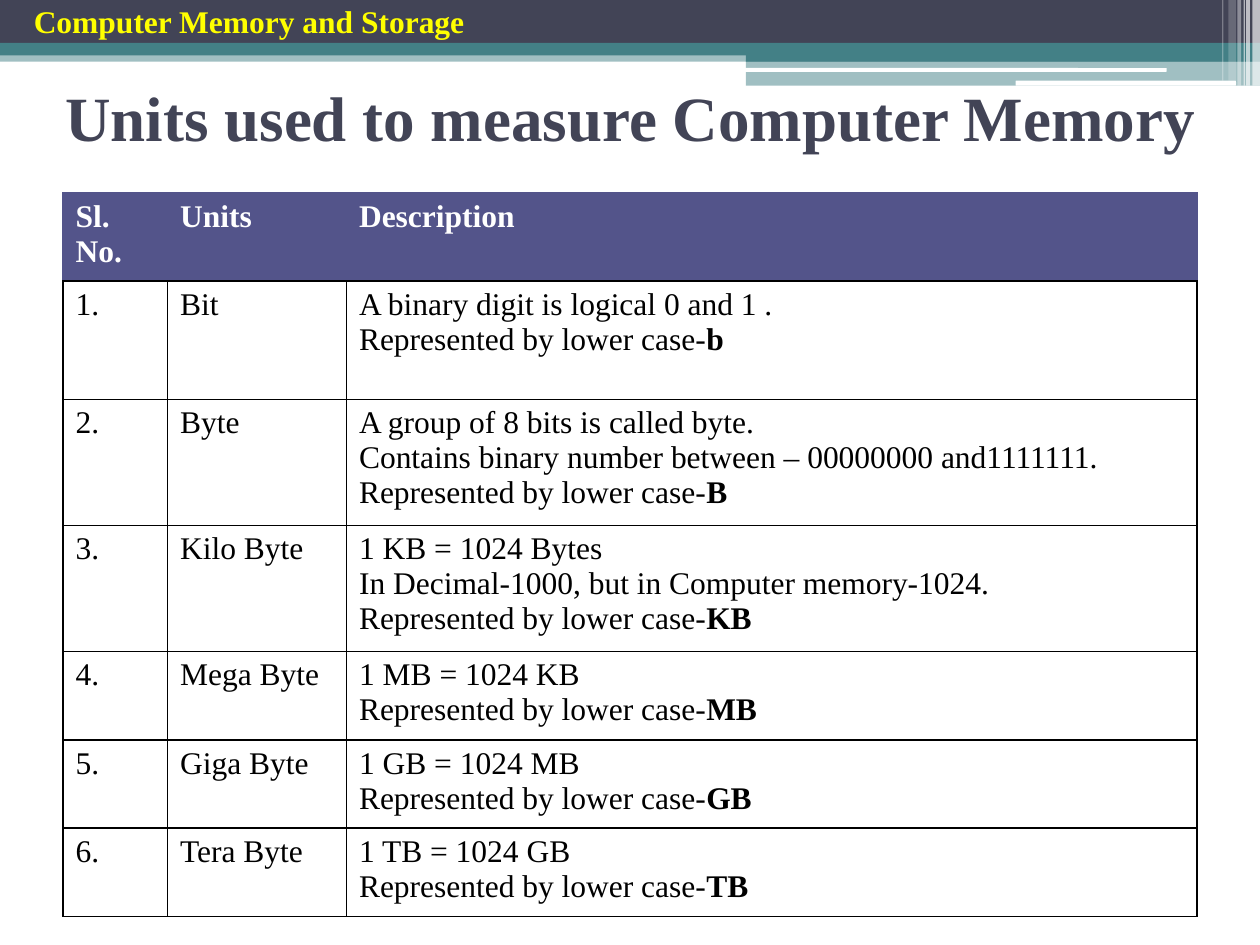
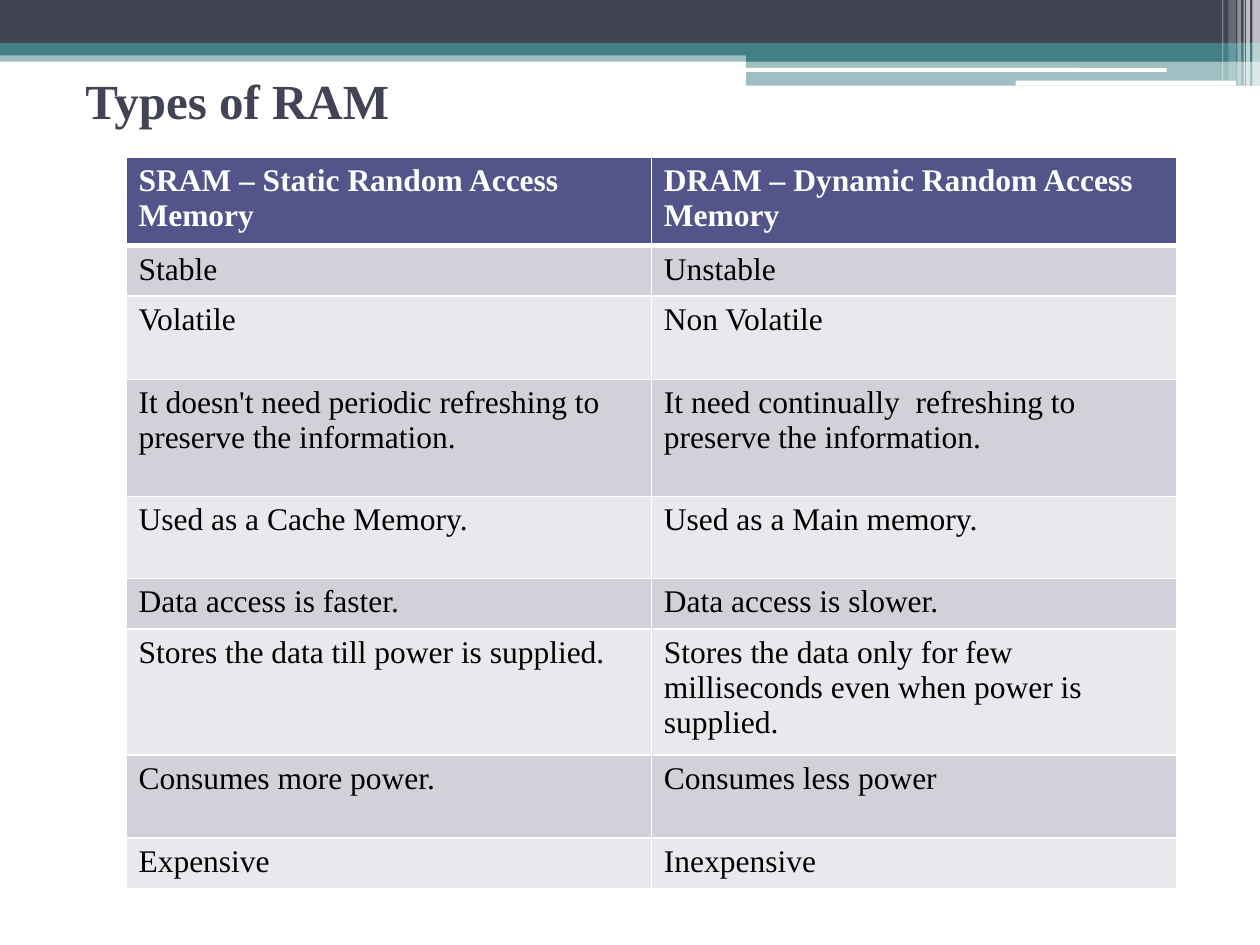
"""Builds two slides on computer memory: units of measure and types of RAM."""
from lxml.etree import SubElement
from pptx import Presentation
from pptx.dml.color import RGBColor
from pptx.enum.shapes import MSO_SHAPE as Shape
from pptx.enum.text import MSO_ANCHOR as Anchor
from pptx.oxml.ns import qn
from pptx.util import Inches, Pt

FONT = "Times New Roman"
INK, TEAL, INDIGO = "424456", "438086", "53548A"
WHITE, BLACK, YELLOW = "FFFFFF", "000000", "FFFF00"
BAND_FILLS = "D1D1DA", "E9E9ED"
WIDTH, HEIGHT = 10, 7.5
STEP = 5.92

BANDS = [
    (0, 0.4, WIDTH, 0.09, TEAL, 50),
    (0, 0, WIDTH, 0.34, INK, 100),
    (0, 0.34, WIDTH, 0.1, TEAL, 100),
    (STEP, 0.39, WIDTH - STEP, 0.1, TEAL, 100),
    (STEP, 0.48, WIDTH - STEP, 0.2, TEAL, 50),
]
SLITS = [(5.91, 0.54, 3.35, 0.03, WHITE, 100), (8.06, 0.64, 1.75, 0.04, WHITE, 100)]
STRIPES = [
    (9.94, 0.06, 0.68, 65), (9.89, 0.03, 0.68, 65), (9.87, 0.01, 0.68, 60),
    (9.82, 0.03, 0.68, 40), (9.75, 0.06, 0.64, 20), (9.7, 0.01, 0.64, 30),
]

SYMBOL = "\nRepresented by lower case-**"
UNITS = [
    ("Bit", "A binary digit is logical 0 and 1 ." + SYMBOL + "b"),
    ("Byte", "A group of 8 bits is called byte.\n"
             "Contains binary number between – 00000000 and1111111." + SYMBOL + "B"),
    ("Kilo Byte", "1 KB = 1024 Bytes\n"
                  "In Decimal-1000, but in Computer memory-1024." + SYMBOL + "KB"),
    ("Mega Byte", "1 MB = 1024 KB" + SYMBOL + "MB"),
    ("Giga Byte", "1 GB = 1024 MB" + SYMBOL + "GB"),
    ("Tera Byte", "1 TB = 1024 GB" + SYMBOL + "TB"),
]
RAM_TYPES = [
    ("SRAM – Static Random Access Memory", "DRAM – Dynamic Random Access Memory"),
    ("Stable", "Unstable"),
    ("Volatile", "Non Volatile"),
    ("It doesn't need periodic refreshing to preserve the information.",
     "It need continually  refreshing to preserve the information."),
    ("Used as a Cache Memory.", "Used as a Main memory."),
    ("Data access is faster.", "Data access is slower."),
    ("Stores the data till power is supplied.",
     "Stores the data only for few milliseconds even when power is supplied."),
    ("Consumes more power.", "Consumes less power"),
    ("Expensive", "Inexpensive"),
]

SLIDES = [
    dict(
        title="Units used to measure Computer Memory", title_size=36,
        title_box=(0.42, 0.67, 9.58, 0.5), topic="Computer Memory and Storage",
        rows=[("Sl. No.", "Units", "Description")]
             + [(f"{number}.", *unit) for number, unit in enumerate(UNITS, 1)],
        corner=(0.5, 1.53), columns=[0.83, 1.42, 6.75],
        heights=[0.67, 0.94, 0.99, 0.95, 0.67, 0.67, 0.67],
        fills=(WHITE, WHITE), grid=(BLACK, 1),
        header_sides=(INDIGO, 0.75), header_rule=(BLACK, 1), numbered=True,
    ),
    dict(
        title="Types of RAM", title_size=28,
        title_box=(0.58, 0.58, 9, 0.42), topic=None,
        rows=RAM_TYPES, corner=(1, 1.25), columns=[4.17, 4.17],
        heights=[0.69, 0.38, 0.66, 0.93, 0.65, 0.38, 0.93, 0.66, 0.37],
        fills=BAND_FILLS, grid=(WHITE, 1),
        header_sides=(WHITE, 1), header_rule=(WHITE, 3), numbered=False,
    ),
]


def paint(fill, color, opacity=100):
    fill.solid()
    fill.fore_color.rgb = RGBColor.from_string(color)
    if opacity < 100:
        tint = fill._xPr.find(qn("a:solidFill"))[0]
        SubElement(tint, qn("a:alpha"), val=str(opacity * 1000))


def write(frame, text, size, color, bold):
    """Writes one paragraph per line; what follows ** is bold."""
    frame.word_wrap = True
    for index, line in enumerate(text.split("\n")):
        paragraph = frame.add_paragraph() if index else frame.paragraphs[0]
        plain, _, strong = line.partition("**")
        for part, heavy in ((plain, bold), (strong, True)):
            if part:
                run = paragraph.add_run()
                run.text = part
                run.font.name, run.font.size, run.font.bold = FONT, Pt(size), heavy
                run.font.color.rgb = RGBColor.from_string(color)


def add_block(slide, kind, left, top, width, height, color, opacity):
    block = slide.shapes.add_shape(kind, *map(Inches, (left, top, width, height)))
    block.shadow.inherit = False
    block.line.fill.background()
    paint(block.fill, color, opacity)


def add_banner(slide):
    for band in BANDS:
        add_block(slide, Shape.RECTANGLE, *band)
    for slit in SLITS:
        add_block(slide, Shape.ROUNDED_RECTANGLE, *slit)
    for left, width, height, opacity in STRIPES:
        add_block(slide, Shape.RECTANGLE, left, 0, width, height, WHITE, opacity)


def add_label(slide, box, text, size, color):
    frame = slide.shapes.add_textbox(*map(Inches, box)).text_frame
    frame.vertical_anchor = Anchor.MIDDLE
    write(frame, text, size, color, True)


def rule_cell(cell, edges):
    for side, (color, weight) in zip("LRTB", edges):
        line = SubElement(cell._tc.get_or_add_tcPr(), qn(f"a:ln{side}"), w=str(Pt(weight)))
        SubElement(SubElement(line, qn("a:solidFill")), qn("a:srgbClr"), val=color)


def add_grid(slide, page):
    rows, columns, heights = page["rows"], page["columns"], page["heights"]
    extent = (*page["corner"], sum(columns), sum(heights))
    table = slide.shapes.add_table(len(rows), len(columns), *map(Inches, extent)).table
    table.horz_banding = False
    for column, width in zip(table.columns, columns):
        column.width = Inches(width)
    sides, rule, grid = page["header_sides"], page["header_rule"], page["grid"]
    for r, (row, height) in enumerate(zip(rows, heights)):
        table.rows[r].height = Inches(height)
        edges = (grid, grid, rule if r == 1 else grid, grid) if r else (sides, sides, sides, rule)
        for c, text in enumerate(row):
            cell = table.cell(r, c)
            rule_cell(cell, edges)
            paint(cell.fill, page["fills"][(r - 1) % 2] if r else INDIGO)
            write(cell.text_frame, text, 18, BLACK if r else WHITE, not r)
            if page["numbered"] and r and c == 0:
                hang = cell.text_frame.paragraphs[0]._p.get_or_add_pPr()
                hang.set("marL", str(Inches(0.38)))
                hang.set("indent", str(-Inches(0.38)))


def main():
    deck = Presentation()
    deck.slide_width, deck.slide_height = Inches(WIDTH), Inches(HEIGHT)
    for page in SLIDES:
        slide = deck.slides.add_slide(deck.slide_layouts[6])
        add_banner(slide)
        add_label(slide, page["title_box"], page["title"], page["title_size"], INK)
        add_grid(slide, page)
        if page["topic"]:
            add_label(slide, (0.17, 0, 4, 0.33), page["topic"], 18, YELLOW)
    deck.save("out.pptx")


if __name__ == "__main__":
    main()
